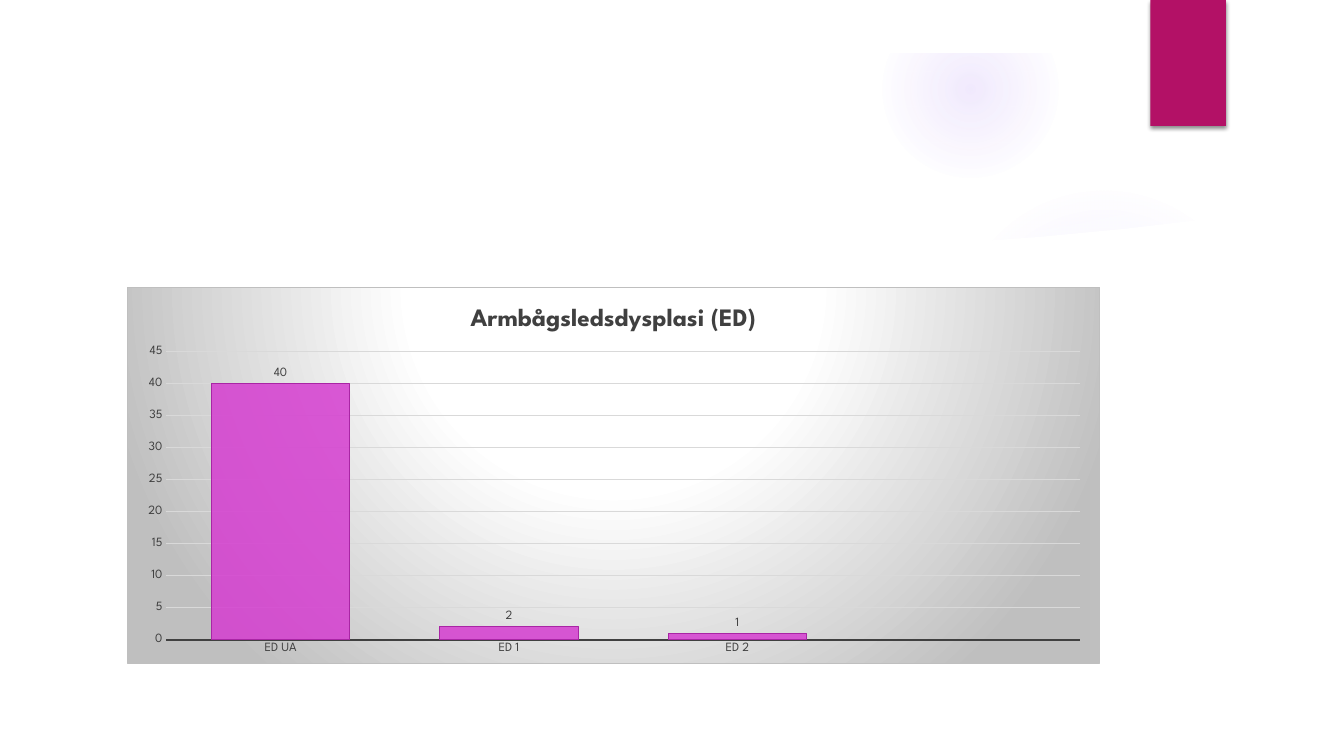
import pptx
import pptx.util
import pptx.chart.data
import pptx.dml.color
import pptx.enum.chart
import pptx.enum.shapes
import pptx.oxml
import pptx.oxml.ns
from lxml import etree

Inches, Pt = pptx.util.Inches, pptx.util.Pt
qn = pptx.oxml.ns.qn
NS = pptx.oxml.ns.nsdecls("a", "c")
FONT = "League Spartan"
INK = "404040"


def tint(fill, color, alpha=100):
    fill.solid()
    fill.fore_color.rgb = pptx.dml.color.RGBColor.from_string(color)
    if alpha < 100:
        node = fill._xPr.find(qn("a:solidFill"))[0]
        etree.SubElement(node, qn("a:alpha"), val=str(alpha * 1000))


def radial(stops, rect):
    marks = "".join(
        f'<a:gs pos="{pos * 1000}"><a:srgbClr val="{color}">'
        f'<a:alpha val="{alpha * 1000}"/></a:srgbClr></a:gs>'
        for pos, color, alpha in stops)
    l, t, r, b = (side * 1000 for side in rect)
    return (f'<a:gradFill {NS} rotWithShape="1"><a:gsLst>{marks}</a:gsLst>'
            f'<a:path path="circle"><a:fillToRect l="{l}" t="{t}" r="{r}" b="{b}"/>'
            '</a:path></a:gradFill>')


deck = pptx.Presentation()
deck.slide_width, deck.slide_height = Inches(13.33), Inches(7.5)
slide = deck.slides.add_slide(deck.slide_layouts[6])
shapes = slide.shapes
kind = pptx.enum.shapes.MSO_SHAPE
tint(slide.background.fill, "FFFFFF")

# Soft violet glows: left, top, size, alpha at centre and midway, fade end
for left, top, size, core, mid, end in [(9.41, 1.83, 3.08, 7, 6, 69),
                                        (8.75, 0.01, 1.75, 14, 7, 73)]:
    glow = shapes.add_shape(kind.OVAL, Inches(left), Inches(top), Inches(size), Inches(size))
    glow.shadow.inherit = False
    glow.line.fill.background()
    glow.fill.background()
    stops = [(0, "9B6BF2", core), (36, "9B6BF2", mid), (end, "9B6BF2", 0)]
    old = glow._element.spPr.find(qn("a:noFill"))
    old.getparent().replace(old, pptx.oxml.parse_xml(radial(stops, [50] * 4)))

# Curved veil and white panel
veil = [(9.3, 2.43), (9.99, 2.34), (10.64, 2.23), (11.32, 2.09), (12.02, 1.91),
        (12.83, 1.66), (12.89, 2.14), (11.5, 2.36), (9.34, 2.5)]
panel = [(0.5, 2.04), (0.5, 7), (12.84, 7), (12.84, 2.04), (12, 2.17), (11.16, 2.27),
         (10.32, 2.35), (9.49, 2.41), (8.67, 2.45), (7.34, 2.48), (6.32, 2.47),
         (5.11, 2.44), (4.01, 2.38), (2.83, 2.3), (1.59, 2.18), (0.79, 2.08)]
for points, alpha in [(veil, 20), (panel, 100)]:
    spots = [(Inches(x), Inches(y)) for x, y in points]
    path = shapes.build_freeform(*spots[0])
    path.add_line_segments(spots[1:])
    sheet = path.convert_to_shape()
    sheet.shadow.inherit = False
    sheet.line.fill.background()
    tint(sheet.fill, "FFFFFF", alpha)

# White frame around the slide
frame = shapes.add_shape(kind.FRAME, 0, 0, deck.slide_width, deck.slide_height)
frame.adjustments[0] = 0.07
frame.shadow.inherit = False
frame.line.fill.background()
tint(frame.fill, "FFFFFF")

# Pink tab with a drop shadow
tab = shapes.add_shape(kind.RECTANGLE, Inches(11.41), 0, Inches(0.75), Inches(1.25))
tab.shadow.inherit = False
tab.line.fill.background()
tint(tab.fill, "B31166")
tab._element.spPr.find(qn("a:effectLst")).append(pptx.oxml.parse_xml(
    f'<a:outerShdw {NS} blurRad="{Pt(3)}" dist="{Pt(2)}" dir="5400000" rotWithShape="0">'
    '<a:srgbClr val="000000"><a:alpha val="45000"/></a:srgbClr></a:outerShdw>'))

# Column chart, with an empty fourth slot
data = pptx.chart.data.CategoryChartData()
data.categories = ["ED UA", "ED 1", "ED 2", ""]
data.add_series("Series 1", [40, 2, 1, None])
chart = shapes.add_chart(pptx.enum.chart.XL_CHART_TYPE.COLUMN_CLUSTERED, Inches(1.26),
                         Inches(2.85), Inches(9.65), Inches(3.74), data).chart
chart.has_legend = False
chart.font.name, chart.font.size = FONT, Pt(10)

# Chart title
chart.has_title = True
chart.chart_title.include_in_layout = False
title = chart.chart_title.text_frame.paragraphs[0]
title.text = "Armbågsledsdysplasi (ED)"
title.font.name, title.font.size, title.font.bold = FONT, Pt(18), True
tint(title.font.fill, INK)

# Axes
for axis in (chart.category_axis, chart.value_axis):
    axis.major_tick_mark = axis.minor_tick_mark = pptx.enum.chart.XL_TICK_MARK.NONE
    axis.tick_labels.font.name, axis.tick_labels.font.size = FONT, Pt(9)
    tint(axis.tick_labels.font.fill, INK)
base, scale = chart.category_axis.format.line, chart.value_axis
base.width = Pt(1.5)
tint(base.fill, INK)
scale.minimum_scale, scale.maximum_scale, scale.major_unit = 0, 45, 5
scale.format.line.fill.background()
grid = scale.major_gridlines.format.line
grid.width = Pt(0.75)
tint(grid.fill, "D9D9D9")

# Bars and their values
plot = chart.plots[0]
plot.gap_width = 65
plot.vary_by_categories = False
bars = plot.series[0]
tint(bars.format.fill, "D53DD0", 85)
bars.format.line.width = Pt(0.75)
tint(bars.format.line.fill, "A925A5")
tags = bars.data_labels
tags.show_value = True
tags.position = pptx.enum.chart.XL_LABEL_POSITION.OUTSIDE_END
tags.font.name, tags.font.size = FONT, Pt(9)
tint(tags.font.fill, INK)

# Plot area position
area = chart._chartSpace.chart.plotArea
for old in area.findall(qn("c:layout")):
    area.remove(old)
area.insert(0, pptx.oxml.parse_xml(
    f'<c:layout {NS}><c:manualLayout><c:layoutTarget val="inner"/>'
    '<c:xMode val="edge"/><c:yMode val="edge"/><c:x val="0.04"/><c:y val="0.17"/>'
    '<c:w val="0.94"/><c:h val="0.766"/></c:manualLayout></c:layout>'))

# Chart background and border
back = radial([(0, "FFFFFF", 100), (39, "FFFFFF", 100), (100, "BFBFBF", 100)],
              [50, -80, 50, 180])
chart._chartSpace.find(qn("c:txPr")).addprevious(pptx.oxml.parse_xml(
    f'<c:spPr {NS}>{back}<a:ln w="{Pt(0.75)}"><a:solidFill><a:srgbClr val="BFBFBF"/>'
    '</a:solidFill></a:ln></c:spPr>'))

deck.save("out.pptx")
